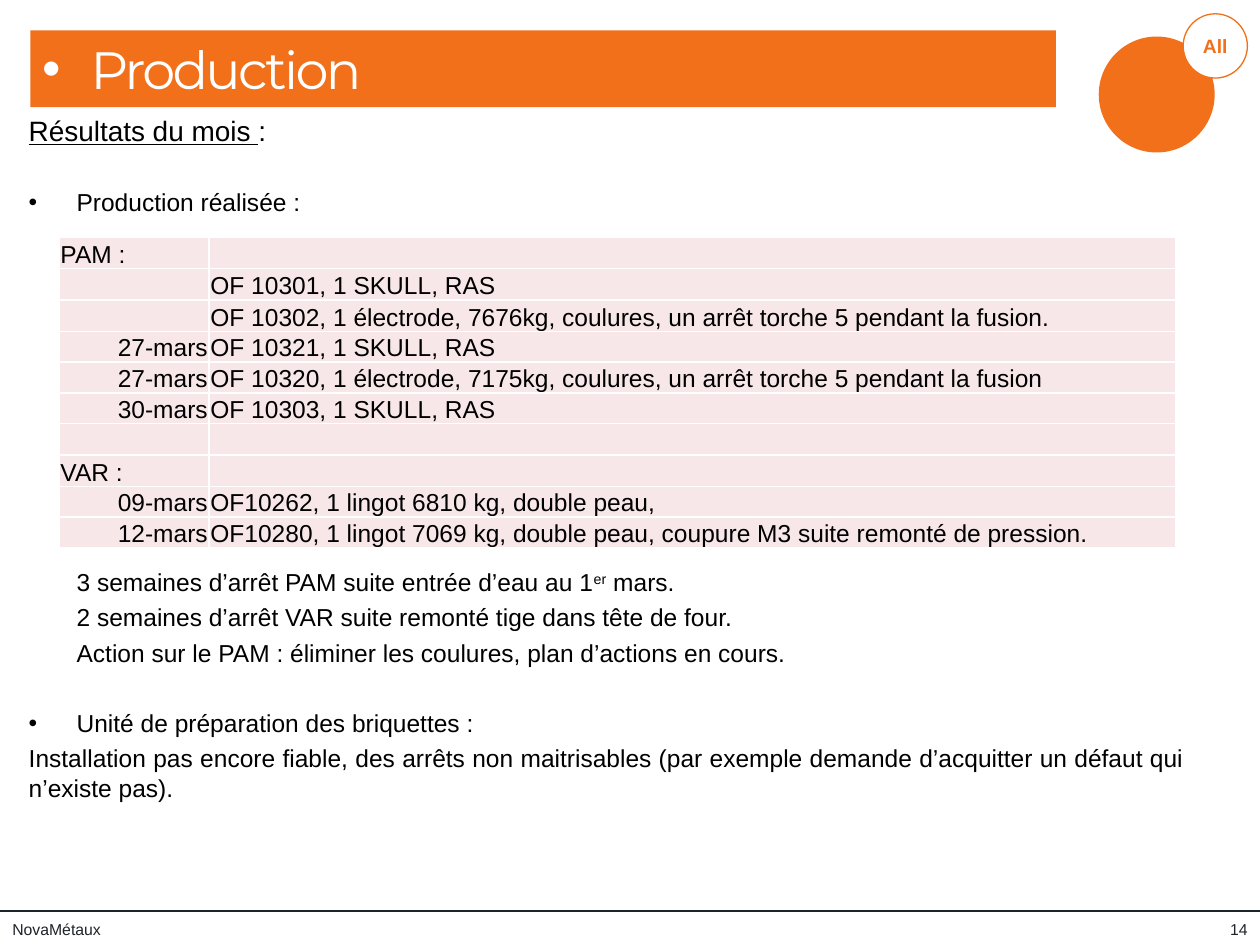
from dataclasses import dataclass

import pptx
import pptx.dml.color
import pptx.enum.shapes
import pptx.enum.text
import pptx.oxml.ns
import pptx.util
from lxml import etree

Inches = pptx.util.Inches
Pt = pptx.util.Pt
Align = pptx.enum.text.PP_ALIGN
Anchor = pptx.enum.text.MSO_ANCHOR
Shape = pptx.enum.shapes.MSO_SHAPE
qn = pptx.oxml.ns.qn


@dataclass(frozen=True)
class Theme:
    orange: str = "F27019"
    dark: str = "1D252B"
    black: str = "000000"
    white: str = "FFFFFF"
    cell: str = "F8E7E8"
    body_font: str = "Arial"
    title_font: str = "Montserrat"
    title: int = 30
    heading: int = 16
    body: int = 14
    badge: int = 11
    footer: int = 9


@dataclass(frozen=True)
class Span:
    text: str
    underline: bool = False
    superscript: bool = False


@dataclass(frozen=True)
class Para:
    spans: tuple[Span, ...]
    before: float = 3.5
    left: float = 0.38
    bullet: bool = False
    size: int = Theme.body


THEME = Theme()
HANGING = 0.38
SECTION_GAP = 23.2
TABLE_GAP = 200

BODY = (
    Para((Span("Résultats du mois ", underline=True), Span(": ")),
         before=0, left=0, size=THEME.heading),
    Para((Span("Production réalisée :"),), before=SECTION_GAP, bullet=True),
    Para((Span("3 semaines d’arrêt PAM suite entrée d’eau au 1"),
          Span("er", superscript=True), Span(" mars.")), before=TABLE_GAP),
    Para((Span("2 semaines d’arrêt VAR suite remonté tige dans tête de four."),)),
    Para((Span("Action sur le PAM : éliminer les coulures, plan d’actions en cours."),)),
    Para((Span("Unité de préparation des briquettes : "),),
         before=SECTION_GAP, bullet=True),
    Para((Span("Installation pas encore fiable, des arrêts non maitrisables (par exemple "
               "demande d’acquitter un défaut qui n’existe pas)."),), left=0),
)

PRODUCTION_ROWS = (
    ("PAM :", ""),
    ("", "OF 10301, 1 SKULL, RAS"),
    ("", "OF 10302, 1 électrode, 7676kg, coulures, un arrêt torche 5 pendant la fusion."),
    ("27-mars", "OF 10321, 1 SKULL, RAS"),
    ("27-mars", "OF 10320, 1 électrode, 7175kg, coulures, un arrêt torche 5 pendant la fusion"),
    ("30-mars", "OF 10303, 1 SKULL, RAS"),
    ("", ""),
    ("VAR :", ""),
    ("09-mars", "OF10262, 1 lingot 6810 kg, double peau,"),
    ("12-mars", "OF10280, 1 lingot 7069 kg, double peau, coupure M3 suite remonté de pression."),
)
COLUMN_WIDTHS = (1.19, 7.67)


def rgb(value: str) -> pptx.dml.color.RGBColor:
    return pptx.dml.color.RGBColor.from_string(value)


def format_run(run, size: int, color: str = THEME.black, font: str = THEME.body_font) -> None:
    run.font.name = font
    run.font.size = Pt(size)
    run.font.color.rgb = rgb(color)


def indent(para, left: float, bullet: bool) -> None:
    """Indent a paragraph; a bullet hangs to the left of its text."""
    properties = para._p.get_or_add_pPr()
    properties.set("marL", str(Inches(left)))
    properties.set("indent", str(Inches(-HANGING) if bullet else 0))
    if bullet:
        etree.SubElement(properties, qn("a:buFont"), typeface="Arial")
        etree.SubElement(properties, qn("a:buChar"), char="•")


def add_title(slide, text: str) -> None:
    title = slide.shapes.title
    title.left, title.top = Inches(0.24), Inches(0.24)
    title.width, title.height = Inches(8.14), Inches(0.61)
    title.fill.solid()
    title.fill.fore_color.rgb = rgb(THEME.orange)
    frame = title.text_frame
    frame.text = text
    frame.auto_size = pptx.enum.text.MSO_AUTO_SIZE.NONE
    frame.vertical_anchor = Anchor.MIDDLE
    para = frame.paragraphs[0]
    para.alignment = Align.LEFT
    indent(para, HANGING, True)
    run = para.runs[0]
    format_run(run, THEME.title, THEME.white, THEME.title_font)
    run.font._element.set("spc", "-150")


def add_circle(slide, left: float, top: float, size: float, fill: str):
    circle = slide.shapes.add_shape(
        Shape.OVAL, Inches(left), Inches(top), Inches(size), Inches(size))
    circle.shadow.inherit = False
    circle.fill.solid()
    circle.fill.fore_color.rgb = rgb(fill)
    circle.line.fill.background()
    return circle


def add_badge(slide, text: str) -> None:
    add_circle(slide, 8.72, 0.29, 0.92, THEME.orange)
    badge = add_circle(slide, 9.39, 0.11, 0.51, THEME.white)
    badge.line.color.rgb = rgb(THEME.orange)
    badge.line.width = Pt(0.75)
    frame = badge.text_frame
    frame.margin_left = frame.margin_right = 0
    frame.vertical_anchor = Anchor.MIDDLE
    frame.text = text
    frame.paragraphs[0].alignment = Align.CENTER
    run = frame.paragraphs[0].runs[0]
    format_run(run, THEME.badge, THEME.orange)
    run.font.bold = True


def add_footer_rule(slide) -> None:
    rule = slide.shapes.add_connector(
        pptx.enum.shapes.MSO_CONNECTOR.STRAIGHT, 0, Inches(7.23), Inches(10), Inches(7.23))
    rule.line.color.rgb = rgb(THEME.dark)
    rule.line.width = Pt(1.5)
    etree.SubElement(rule._element.spPr, qn("a:effectLst"))


def add_footer_text(slide, left: float, width: float, text: str, alignment: Align) -> None:
    box = slide.shapes.add_textbox(Inches(left), Inches(7.25), Inches(width), Inches(0.25))
    frame = box.text_frame
    frame.word_wrap = True
    frame.vertical_anchor = Anchor.MIDDLE
    frame.text = text
    frame.paragraphs[0].alignment = alignment
    format_run(frame.paragraphs[0].runs[0], THEME.footer, THEME.dark)


def add_body(slide, paras: tuple[Para, ...]) -> None:
    box = slide.shapes.add_textbox(Inches(0.13), Inches(0.85), Inches(9.37), Inches(6.4))
    frame = box.text_frame
    frame.word_wrap = True
    for index, item in enumerate(paras):
        para = frame.add_paragraph() if index else frame.paragraphs[0]
        para.alignment = Align.JUSTIFY
        para.space_before = Pt(item.before)
        indent(para, item.left, item.bullet)
        for span in item.spans:
            run = para.add_run()
            run.text = span.text
            format_run(run, item.size)
            run.font.underline = span.underline
            if span.superscript:
                run.font._element.set("baseline", "30000")


def add_borders(cell) -> None:
    properties = cell._tc.get_or_add_tcPr()
    for side in ("lnL", "lnR", "lnT", "lnB"):
        line = etree.SubElement(properties, qn(f"a:{side}"), w=str(Pt(1)))
        fill = etree.SubElement(line, qn("a:solidFill"))
        etree.SubElement(fill, qn("a:srgbClr"), val=THEME.white)


def fill_cell(cell, text: str) -> None:
    add_borders(cell)
    cell.fill.solid()
    cell.fill.fore_color.rgb = rgb(THEME.cell)
    cell.margin_left = cell.margin_right = cell.margin_top = Inches(0.01)
    cell.margin_bottom = 0
    cell.vertical_anchor = Anchor.BOTTOM
    para = cell.text_frame.paragraphs[0]
    if text:
        para.text = text
        para.alignment = Align.RIGHT if text.endswith("-mars") else Align.LEFT
        format_run(para.runs[0], THEME.body)
    else:
        etree.SubElement(para._p, qn("a:endParaRPr"), sz=str(THEME.body * 100))


def add_production_table(slide, rows: tuple[tuple[str, str], ...]) -> None:
    heights = [0.23 if all(row) else 0.25 for row in rows]
    table = slide.shapes.add_table(
        len(rows), len(COLUMN_WIDTHS), Inches(0.47), Inches(1.88),
        Inches(sum(COLUMN_WIDTHS)), Inches(sum(heights))).table
    table.first_row = table.horz_banding = False
    for column, width in zip(table.columns, COLUMN_WIDTHS):
        column.width = Inches(width)
    for row, height, texts in zip(table.rows, heights, rows):
        row.height = Inches(height)
        for cell, text in zip(row.cells, texts):
            fill_cell(cell, text)


def main() -> None:
    deck = pptx.Presentation()
    deck.slide_width, deck.slide_height = Inches(10), Inches(7.5)
    slide = deck.slides.add_slide(deck.slide_layouts.get_by_name("Title Only"))
    add_footer_rule(slide)
    add_badge(slide, "All")
    add_footer_text(slide, 0, 3.44, "NovaMétaux", Align.LEFT)
    add_footer_text(slide, 9.51, 0.49, "14", Align.RIGHT)
    add_title(slide, "Production")
    add_body(slide, BODY)
    add_production_table(slide, PRODUCTION_ROWS)
    deck.save("out.pptx")


if __name__ == "__main__":
    main()
